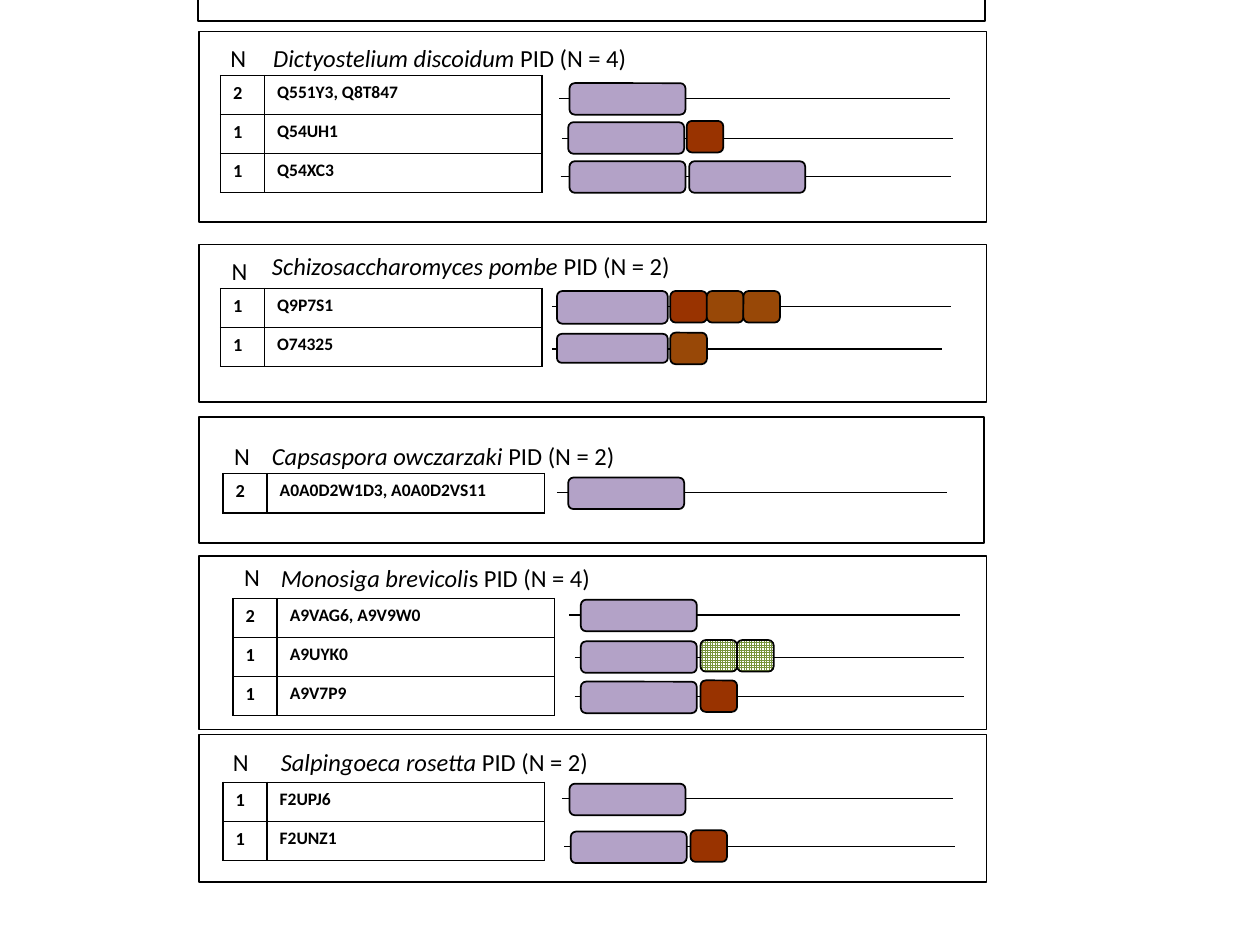
from typing import NamedTuple

from pptx import Presentation
from pptx.dml.color import RGBColor
from pptx.enum import dml, shapes
from pptx.oxml import parse_xml
from pptx.oxml.ns import nsdecls
from pptx.oxml.xmlchemy import OxmlElement
from pptx.util import Emu, Pt

PX = 9144  # 100 px to the inch
FONT = "Calibri"
BLACK, WHITE = "000000", "FFFFFF"
PURPLE, RED, BROWN, GREEN = "B3A2C7", "993300", "984807", "77933C"
ROW_H, COL_WIDTHS = 31, (35, 220)


class Box(NamedTuple):
    x: int
    y: int
    w: int
    h: int


class Domain(NamedTuple):
    color: str
    x: int
    y: int
    w: int = 29
    h: int = 25


class Protein(NamedTuple):
    count: int
    ids: str
    x1: int
    x2: int
    y: int
    domains: list[Domain]


class Panel(NamedTuple):
    frame: Box
    n_label: Box
    title: Box
    species: str
    suffix: str
    table_xy: tuple[int, int]
    proteins: list[Protein]


PANELS = [
    Panel(Box(158, 25, 625, 151), Box(173, 29, 33, 34), Box(207, 29, 303, 34),
          "Dictyostelium discoidum", " PID (N = 4)", (175, 60), [
        Protein(2, "Q551Y3, Q8T847", 444, 754, 78, [Domain(PURPLE, 452, 66, 92)]),
        Protein(1, "Q54UH1", 446, 756, 110,
                [Domain(PURPLE, 451, 97, 92), Domain(RED, 545, 96)]),
        Protein(1, "Q54XC3", 445, 755, 140,
                [Domain(PURPLE, 452, 128, 92), Domain(PURPLE, 547, 128, 92)]),
    ]),
    Panel(Box(158, 194, 625, 125), Box(174, 198, 33, 34), Box(206, 194, 338, 34),
          "Schizosaccharomyces pombe", " PID (N = 2)", (175, 229), [
        Protein(1, "Q9P7S1", 438, 755, 243,
                [Domain(PURPLE, 442, 231, 88, 26), Domain(RED, 532, 231),
                 Domain(BROWN, 561, 231), Domain(BROWN, 590, 231)]),
        Protein(1, "O74325", 438, 748, 277,
                [Domain(PURPLE, 442, 265, 88, 23), Domain(BROWN, 532, 264)]),
    ]),
    Panel(Box(158, 331, 623, 100), Box(176, 345, 33, 34), Box(206, 345, 294, 34),
          "Capsaspora owczarzaki", " PID (N = 2)", (177, 376), [
        Protein(2, "A0A0D2W1D3, A0A0D2VS11", 442, 752, 391,
                [Domain(PURPLE, 451, 379, 92)]),
    ]),
    Panel(Box(158, 441, 625, 138), Box(184, 441, 33, 34), Box(213, 442, 268, 34),
          "Monosiga brevicoli", "s PID (N = 4)", (185, 475), [
        Protein(2, "A9VAG6, A9V9W0", 452, 762, 488, [Domain(PURPLE, 461, 476, 92)]),
        Protein(1, "A9UYK0", 456, 765, 522,
                [Domain(PURPLE, 461, 509, 92), Domain(GREEN, 556, 508),
                 Domain(GREEN, 585, 508)]),
        Protein(1, "A9V7P9", 456, 765, 553,
                [Domain(PURPLE, 461, 541, 92), Domain(RED, 556, 540)]),
    ]),
    Panel(Box(158, 583, 625, 117), Box(175, 588, 33, 34), Box(213, 588, 265, 34),
          "Salpingoeca rosetta", " PID (N = 2)", (177, 621), [
        Protein(1, "F2UPJ6", 446, 756, 634, [Domain(PURPLE, 452, 622, 92)]),
        Protein(1, "F2UNZ1", 448, 758, 672,
                [Domain(PURPLE, 453, 660, 92), Domain(RED, 548, 659)]),
    ]),
]


def px(*lengths: int) -> list[Emu]:
    return [Emu(n * PX) for n in lengths]


def rgb(color: str) -> RGBColor:
    return RGBColor.from_string(color)


def style_run(r, size: float, bold: bool = False, italic: bool = False) -> None:
    r.font.name, r.font.size = FONT, Pt(size)
    r.font.bold, r.font.italic = bold, italic
    r.font.color.rgb = rgb(BLACK)


def add_block(parent, kind, box: Box, color: str) -> None:
    sp = parent.add_shape(kind, *px(*box))
    sp.shadow.inherit = False
    if color == GREEN:
        sp.fill.patterned()
        sp.fill.pattern = dml.MSO_PATTERN.SMALL_GRID
        sp.fill.fore_color.rgb, sp.fill.back_color.rgb = rgb(GREEN), rgb(WHITE)
    else:
        sp.fill.solid()
        sp.fill.fore_color.rgb = rgb(color)
    sp.line.color.rgb, sp.line.width = rgb(BLACK), Pt(1)


def add_label(parent, box: Box, plain: str, italic: str = "") -> None:
    tf = parent.add_textbox(*px(*box)).text_frame
    tf.word_wrap = False
    p = tf.paragraphs[0]
    for words, slanted in ((italic, True), (plain, False)):
        if words:
            r = p.add_run()
            r.text = words
            style_run(r, 14, italic=slanted)


def add_protein(parent, protein: Protein) -> None:
    group = parent.add_group_shape().shapes
    line = group.add_connector(shapes.MSO_CONNECTOR.STRAIGHT,
                               *px(protein.x1, protein.y, protein.x2, protein.y))
    line.line.color.rgb, line.line.width = rgb(BLACK), Pt(0.75)
    line._element.spPr.append(OxmlElement("a:effectLst"))
    for d in protein.domains:
        add_block(group, shapes.MSO_SHAPE.ROUNDED_RECTANGLE,
                  Box(d.x, d.y, d.w, d.h), d.color)


def add_borders(cell) -> None:
    tc_pr = cell._tc.get_or_add_tcPr()
    for side in "LRTB":
        tc_pr.append(parse_xml(
            f'<a:ln{side} {nsdecls("a")} w="{Pt(1)}"><a:solidFill>'
            f'<a:srgbClr val="{BLACK}"/></a:solidFill></a:ln{side}>'))


def add_id_table(parent, xy: tuple[int, int], proteins: list[Protein]) -> None:
    rows = len(proteins)
    table = parent.add_table(rows, 2, *px(*xy, sum(COL_WIDTHS), ROW_H * rows)).table
    table.first_row = table.horz_banding = False
    for column, width in zip(table.columns, px(*COL_WIDTHS)):
        column.width = width
    for row, protein in zip(table.rows, proteins):
        values = ((str(protein.count), 10.5), (protein.ids, 10))
        for cell, (value, size) in zip(row.cells, values):
            cell.text_frame.text = value
            style_run(cell.text_frame.paragraphs[0].runs[0], size, bold=True)
            add_borders(cell)
            cell.fill.background()


def add_panel(parent, panel: Panel) -> None:
    add_block(parent, shapes.MSO_SHAPE.RECTANGLE, panel.frame, WHITE)
    add_label(parent, panel.n_label, "N")
    add_label(parent, panel.title, panel.suffix, panel.species)
    add_id_table(parent, panel.table_xy, panel.proteins)
    for protein in panel.proteins:
        add_protein(parent, protein)


def main() -> None:
    prs = Presentation()
    prs.slide_width, prs.slide_height = px(1000, 750)
    s = prs.slides.add_slide(prs.slide_layouts[6])
    # Panel running in from the top edge
    add_block(s.shapes, shapes.MSO_SHAPE.RECTANGLE, Box(157, -139, 625, 156), WHITE)
    # One panel per species
    for panel in PANELS:
        add_panel(s.shapes, panel)
    prs.save("out.pptx")


if __name__ == "__main__":
    main()
